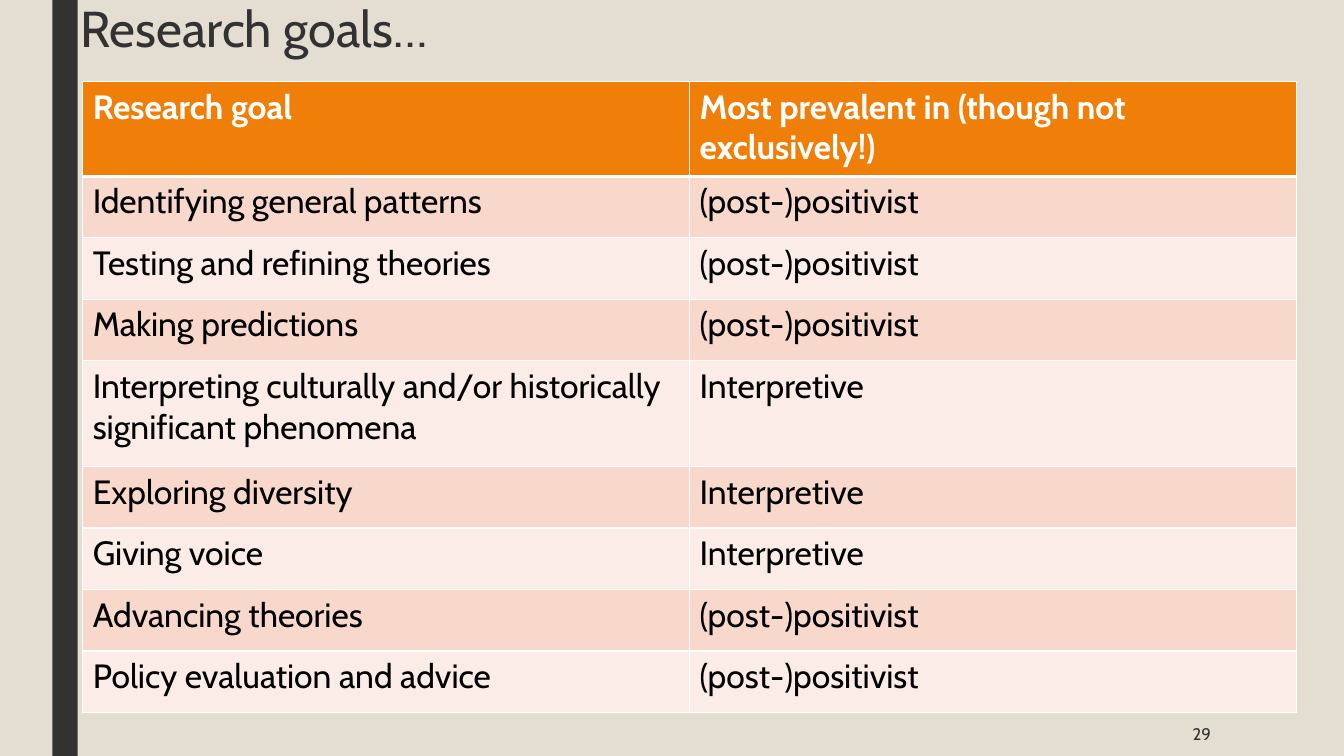
from lxml.etree import SubElement
from pptx import Presentation
from pptx.dml.color import RGBColor
from pptx.enum.shapes import MSO_SHAPE as Shape
from pptx.enum.text import MSO_ANCHOR as Anchor, PP_ALIGN as Align
from pptx.oxml.ns import qn
from pptx.util import Inches, Pt

COLORS = {
    "background": "E3DED1",
    "dark": "323232",
    "header": "F07F09",
    "odd_row": "F9D8CC",
    "even_row": "FCECE7",
    "white": "FFFFFF",
    "black": "000000",
}
POSITIVIST, INTERPRETIVE = "(post-)positivist", "Interpretive"
GOALS = [
    ("Research goal", "Most prevalent in (though not exclusively!)"),
    ("Identifying general patterns", POSITIVIST),
    ("Testing and refining theories", POSITIVIST),
    ("Making predictions", POSITIVIST),
    ("Interpreting culturally and/or historically significant phenomena", INTERPRETIVE),
    ("Exploring diversity", INTERPRETIVE),
    ("Giving voice", INTERPRETIVE),
    ("Advancing theories", POSITIVIST),
    ("Policy evaluation and advice", POSITIVIST),
]
ROW_HEIGHT = 0.61
TALL_ROWS = {0: 0.94, 4: 1.05}


def rgb(name):
    """Return the named colour."""
    return RGBColor.from_string(COLORS[name])


def write(frame, text, size, color, bold=False, **paragraph_format):
    """Put one formatted paragraph into a text frame."""
    frame.word_wrap = True
    paragraph = frame.paragraphs[0]
    paragraph.text = text
    for key, value in paragraph_format.items():
        setattr(paragraph, key, value)
    font = paragraph.runs[0].font
    for key, value in {"name": "Cabin", "size": Pt(size), "bold": bold}.items():
        setattr(font, key, value)
    font.color.rgb = rgb(color)


def add_side_bar(slide, left, top, width, height):
    """Draw the dark vertical bar at the left of the slide."""
    bar = slide.shapes.add_shape(
        Shape.RECTANGLE, Inches(left), Inches(top), Inches(width), Inches(height))
    bar.shadow.inherit = False
    bar.fill.solid()
    bar.fill.fore_color.rgb = rgb("dark")
    bar.line.fill.background()


def add_label(slide, left, top, width, height, text, size, anchor, **paragraph_format):
    """Place a dark line of text in the given box."""
    label = slide.shapes.add_textbox(
        Inches(left), Inches(top), Inches(width), Inches(height))
    label.text_frame.vertical_anchor = anchor
    write(label.text_frame, text, size, "dark", **paragraph_format)


def add_borders(cell, widths):
    """Give a cell white borders of the given widths in points."""
    properties = cell._tc.get_or_add_tcPr()
    for side, width in widths.items():
        line = SubElement(properties, qn(f"a:ln{side}"), w=str(Pt(width)))
        fill = SubElement(line, qn("a:solidFill"))
        SubElement(fill, qn("a:srgbClr"), val=COLORS["white"])


def add_goals_table(slide, left, top, width, height):
    """Build the banded table of research goals."""
    table = slide.shapes.add_table(
        len(GOALS), 2, Inches(left), Inches(top), Inches(width), Inches(height)).table
    for column in table.columns:
        column.width = Inches(width / 2)
    for r, goal in enumerate(GOALS):
        table.rows[r].height = Inches(TALL_ROWS.get(r, ROW_HEIGHT))
        is_header = r == 0
        band = "header" if is_header else "odd_row" if r % 2 else "even_row"
        for c, text in enumerate(goal):
            cell = table.cell(r, c)
            add_borders(cell, {"L": 1, "R": 1, "T": 3 if r == 1 else 1,
                               "B": 3 if is_header else 1})
            cell.fill.solid()
            cell.fill.fore_color.rgb = rgb(band)
            write(cell.text_frame, text, 24, "white" if is_header else "black", is_header)


def main():
    """Build and save the research goals slide."""
    deck = Presentation()
    deck.slide_width, deck.slide_height = Inches(13.33), Inches(7.5)
    slide = deck.slides.add_slide(deck.slide_layouts[6])
    slide.background.fill.solid()
    slide.background.fill.fore_color.rgb = rgb("background")
    add_side_bar(slide, 0.52, 0, 0.25, 7.5)
    add_label(slide, 0.7, 0, 11.5, 1.37, "Research goals…", 36, Anchor.TOP,
              line_spacing=0.89)
    add_label(slide, 10.36, 7.06, 1.75, 0.44, "29", 12, Anchor.MIDDLE,
              alignment=Align.RIGHT)
    add_goals_table(slide, 0.82, 0.81, 12.04, 6.24)
    deck.save("out.pptx")


if __name__ == "__main__":
    main()
